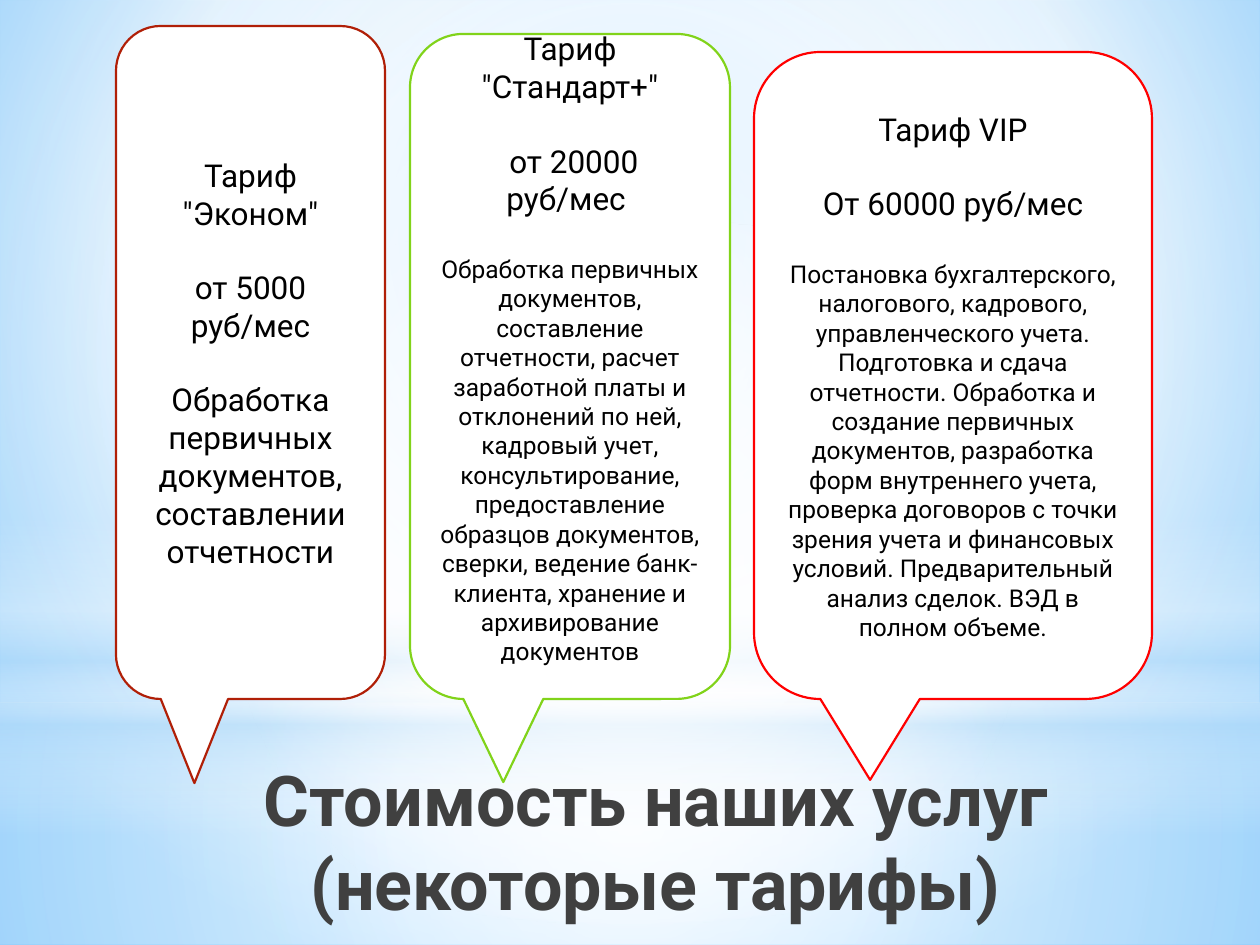
from pptx import Presentation
from pptx.dml.color import RGBColor
from pptx.enum.shapes import MSO_SHAPE
from pptx.enum.text import MSO_ANCHOR, PP_ALIGN
from pptx.oxml import parse_xml
from pptx.oxml.ns import nsdecls, qn
from pptx.util import Emu, Pt

RECT = MSO_SHAPE.RECTANGLE
OVAL = MSO_SHAPE.OVAL
CALLOUT = MSO_SHAPE.ROUNDED_RECTANGULAR_CALLOUT
CENTER = PP_ALIGN.CENTER
MIDDLE = MSO_ANCHOR.MIDDLE
TOP = MSO_ANCHOR.TOP

FONT = "Roboto"
COLORS = {
    "white": "FFFFFF", "black": "000000", "title": "404040",
    "sky": "9ED5FF", "blue": "5BB9FF", "pale": "B4DCFA",
    "brown": "B01F07", "green": "81D31A", "red": "FF0000",
}
MID = (50, 50, 50, 50)


def px(n):
    return Emu(round(n * 914400 / 126))


def color(name):
    return RGBColor.from_string(COLORS[name])


def shade(node, stops, focus=None):
    marks = "".join(
        f'<a:gs pos="{pos * 1000}"><a:srgbClr val="{COLORS[name]}">'
        f'<a:alpha val="{alpha * 1000}"/></a:srgbClr></a:gs>'
        for pos, name, alpha in stops)
    if focus:
        sides = " ".join(f'{side}="{n * 1000}"' for side, n in zip("ltrb", focus))
        way = f'<a:path path="circle"><a:fillToRect {sides}/></a:path>'
    else:
        way = '<a:lin ang="5400000" scaled="0"/>'
    grad = parse_xml(f'<a:gradFill {nsdecls("a")} rotWithShape="1">'
                     f'<a:gsLst>{marks}</a:gsLst>{way}</a:gradFill>')
    old = next(node.iter(qn("a:gradFill")))
    old.getparent().replace(old, grad)


def glow(slide, kind, box, stops, focus=None):
    shape = slide.shapes.add_shape(kind, *map(px, box))
    shape.shadow.inherit = False
    shape.line.fill.background()
    shape.fill.gradient()
    shade(shape._element, stops, focus)


def backdrop(slide, box):
    left, top, width, height = box
    fill = slide.background.fill
    fill.gradient()
    shade(slide._element, [(0, "sky", 100), (60, "white", 100), (100, "blue", 100)],
          (20, 10, 20, 60))
    split = 703
    glow(slide, RECT, (left, top + split, width, height - split),
         [(0, "white", 91), (37, "white", 76), (100, "pale", 79)], MID)
    glow(slide, RECT, (left, top, width, split),
         [(0, "white", 89), (48, "white", 62), (100, "pale", 79)], MID)
    glow(slide, RECT, (left, top + 519, width, 315),
         [(0, "white", 0), (29, "white", 30), (45, "pale", 40),
          (55, "white", 26), (65, "pale", 60), (100, "white", 0)])
    glow(slide, OVAL, (left, top + 220, width, split),
         [(0, "white", 100), (56, "white", 0)], MID)


def style(para, size, name, bold=False):
    para.alignment = CENTER
    for run in para.runs:
        run.font.name = FONT
        run.font.size = Pt(size)
        run.font.bold = bold
        run.font.color.rgb = color(name)


def title(slide, box, text):
    frame = slide.shapes.add_textbox(*map(px, box)).text_frame
    frame.word_wrap = True
    frame.vertical_anchor = TOP
    frame.margin_top = frame.margin_bottom = 0
    frame.text = text
    style(frame.paragraphs[0], 40, "title", True)


def card(slide, box, edge, texts, size, foot):
    shape = slide.shapes.add_shape(CALLOUT, *map(px, box))
    shape.shadow.inherit = False
    shape.fill.solid()
    shape.fill.fore_color.rgb = color("white")
    shape.line.color.rgb = color(edge)
    shape.line.width = Pt(1.25)
    frame = shape.text_frame
    frame.word_wrap = True
    frame.vertical_anchor = MIDDLE
    frame.margin_bottom = px(foot)
    frame.text = "\n".join(texts)
    for para, points in zip(frame.paragraphs, (18, 18, size)):
        style(para, points, "black")
    for para in frame.paragraphs[1:]:
        para.space_before = Pt(21)


def cards(slide, base):
    plans = [
        (116, 26, 269, "brown", 18, 6, (
            'Тариф "Эконом"', "от 5000 руб/мес",
            "Обработка первичных документов, составлении отчетности")),
        (410, 34, 320, "green", 14, 44, (
            'Тариф "Стандарт+"', " от 20000 руб/мес ",
            "Обработка первичных документов, составление отчетности, расчет "
            "заработной платы и отклонений по ней, кадровый учет, "
            "консультирование, предоставление образцов документов, сверки, "
            "ведение банк-клиента, хранение и архивирование документов")),
        (754, 52, 398, "red", 14, 6, (
            "Тариф VIP", "От 60000 руб/мес",
            "Постановка бухгалтерского, налогового, кадрового, "
            "управленческого учета. Подготовка и сдача отчетности. Обработка "
            "и создание первичных документов, разработка форм внутреннего "
            "учета, проверка договоров с точки зрения учета и финансовых "
            "условий. Предварительный анализ сделок. ВЭД в полном объеме.")),
    ]
    for left, top, width, edge, size, foot, texts in plans:
        card(slide, (left, top, width, base - top), edge, texts, size, foot)


def main():
    deck = Presentation()
    deck.slide_width, deck.slide_height = px(1260), px(945)
    slide = deck.slides.add_slide(deck.slide_layouts[6])
    backdrop(slide, (0, 0, 1260, 945))
    title(slide, (207, 757, 897, 164), "Стоимость наших услуг (некоторые тарифы)")
    cards(slide, 699)
    deck.save("out.pptx")


if __name__ == "__main__":
    main()
